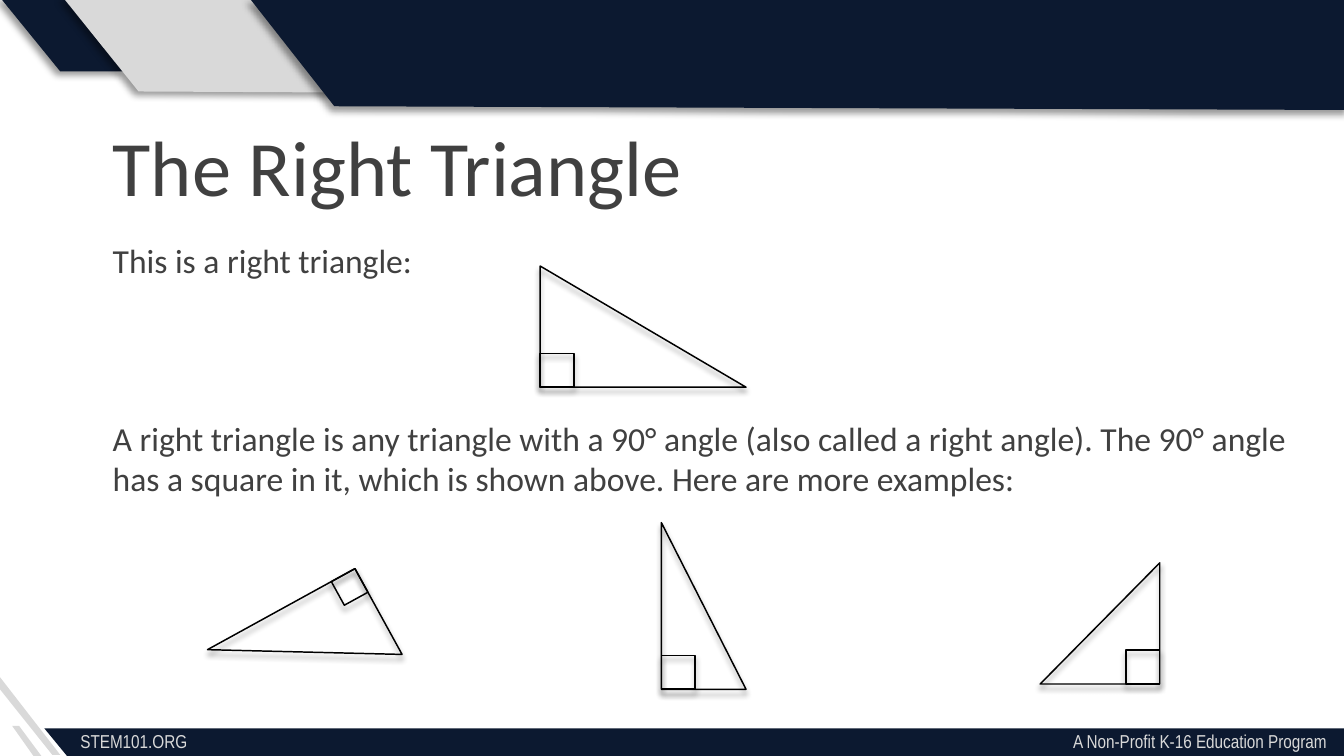
import math

import lxml.etree
import pptx
import pptx.dml.color
import pptx.enum.shapes
import pptx.oxml.ns
import pptx.util

Cm = pptx.util.Cm
Pt = pptx.util.Pt
Preset = pptx.enum.shapes.MSO_SHAPE
qn = pptx.oxml.ns.qn

NAVY, GREY, INK, BLACK = "0C1930", "D9D9D9", "404040", "000000"


def color(hex_code):
    return pptx.dml.color.RGBColor.from_string(hex_code)


def cast_shadow(shape, opacity, blur, distance, angle):
    shape.shadow.inherit = False
    effects = shape._element.spPr.find(qn("a:effectLst"))
    shadow = lxml.etree.SubElement(
        effects, qn("a:outerShdw"), blurRad=str(Pt(blur)), dist=str(Pt(distance)),
        dir=str(angle * 60000), algn="ctr", rotWithShape="0")
    tint = lxml.etree.SubElement(shadow, qn("a:srgbClr"), val=BLACK)
    lxml.etree.SubElement(tint, qn("a:alpha"), val=str(opacity * 1000))


def add_band(slide, corners, fill, raised=False):
    points = [(Cm(x), Cm(y)) for x, y in corners]
    builder = slide.shapes.build_freeform(*points[0])
    builder.add_line_segments(points[1:], close=True)
    band = builder.convert_to_shape()
    band.fill.solid()
    band.fill.fore_color.rgb = color(fill)
    band.line.fill.background()
    band.shadow.inherit = False
    if raised:
        cast_shadow(band, 40, 4, 3, 135)


def add_text(slide, text, left, top, width, height, size, font="Calibri", ink=INK, right_tab=None):
    box = slide.shapes.add_textbox(Cm(left), Cm(top), Cm(width), Cm(height))
    box.text_frame.word_wrap = True
    box.text_frame.text = text
    paragraph = box.text_frame.paragraphs[0]
    if right_tab:
        stops = lxml.etree.SubElement(paragraph._p.get_or_add_pPr(), qn("a:tabLst"))
        lxml.etree.SubElement(stops, qn("a:tab"), pos=str(Cm(right_tab)), algn="r")
    for run in paragraph.runs:
        run.font.name = font
        run.font.size = Pt(size)
        run.font.color.rgb = color(ink)


def add_outline(group, preset, left, top, width, height, rotation):
    outline = group.shapes.add_shape(preset, Cm(left), Cm(top), Cm(width), Cm(height))
    outline.rotation = rotation
    outline.fill.background()
    outline.line.color.rgb = color(BLACK)
    outline.line.width = Pt(0.79)
    cast_shadow(outline, 45, 3, 2.4, 90)
    return outline


def add_right_triangle(slide, left, top, width, height, mark, rotation=0, mirrored=False):
    group = slide.shapes.add_group_shape()
    triangle = add_outline(group, Preset.RIGHT_TRIANGLE, left, top, width, height, rotation)
    if mirrored:
        triangle._element.spPr.find(qn("a:xfrm")).set("flipH", "1")

    across = (width - mark) / 2 * (1 if mirrored else -1)
    down = (height - mark) / 2
    turn = math.radians(rotation)
    mark_x = left + width / 2 + across * math.cos(turn) - down * math.sin(turn)
    mark_y = top + height / 2 + across * math.sin(turn) + down * math.cos(turn)
    add_outline(group, Preset.RECTANGLE, mark_x - mark / 2, mark_y - mark / 2, mark, mark, rotation)


def add_frame(slide):
    add_band(slide, [(1.14, 1.35), (0, -0.05), (1.22, -0.05), (2.36, 1.35)], NAVY, raised=True)
    add_band(slide, [(2.62, 1.73), (1.19, -0.05), (5.18, -0.05), (6.58, 1.75)], GREY, raised=True)
    add_band(slide, [(0.79, 14.3), (0.64, 14.3), (0.23, 13.72), (0.36, 13.72)], GREY)
    add_band(slide, [(1.14, 14.27), (0.99, 14.27), (0, 13.03), (0, 12.8)], GREY)
    add_band(slide, [(6.32, 2.01), (4.72, -0.03), (25.45, -0.03), (25.5, 2.08)], NAVY, raised=True)
    add_band(slide, [(25.55, 14.35), (1.3, 14.33), (0.84, 13.77), (25.58, 13.77)], NAVY)
    add_text(slide, "STEM101.ORG\tA Non-Profit K-16 Education Program",
             1.27, 13.67, 24.13, 0.69, 10, "Arial Narrow", GREY, right_tab=23.55)


def main():
    deck = pptx.Presentation()
    deck.slide_width, deck.slide_height = Cm(25.4), Cm(14.29)
    slide = deck.slides.add_slide(deck.slide_layouts[6])

    add_frame(slide)
    add_text(slide, "The Right Triangle", 1.88, 2.1, 23, 2.1, 42)
    add_text(slide, "This is a right triangle:", 1.88, 4.42, 8, 1.05, 18)
    add_text(slide, "A right triangle is any triangle with a 90° angle (also called a right angle). "
                    "The 90° angle has a square in it, which is shown above. Here are more examples:",
             1.88, 7.77, 22.86, 1.8, 18)

    add_right_triangle(slide, 10.21, 5.03, 3.89, 2.29, 0.64)
    add_right_triangle(slide, 4.17, 11.4, 3.18, 1.85, 0.51, rotation=151.2)
    add_right_triangle(slide, 12.5, 9.88, 1.6, 3.15, 0.64)
    add_right_triangle(slide, 19.66, 10.64, 2.26, 2.29, 0.64, mirrored=True)
    deck.save("out.pptx")


if __name__ == "__main__":
    main()
